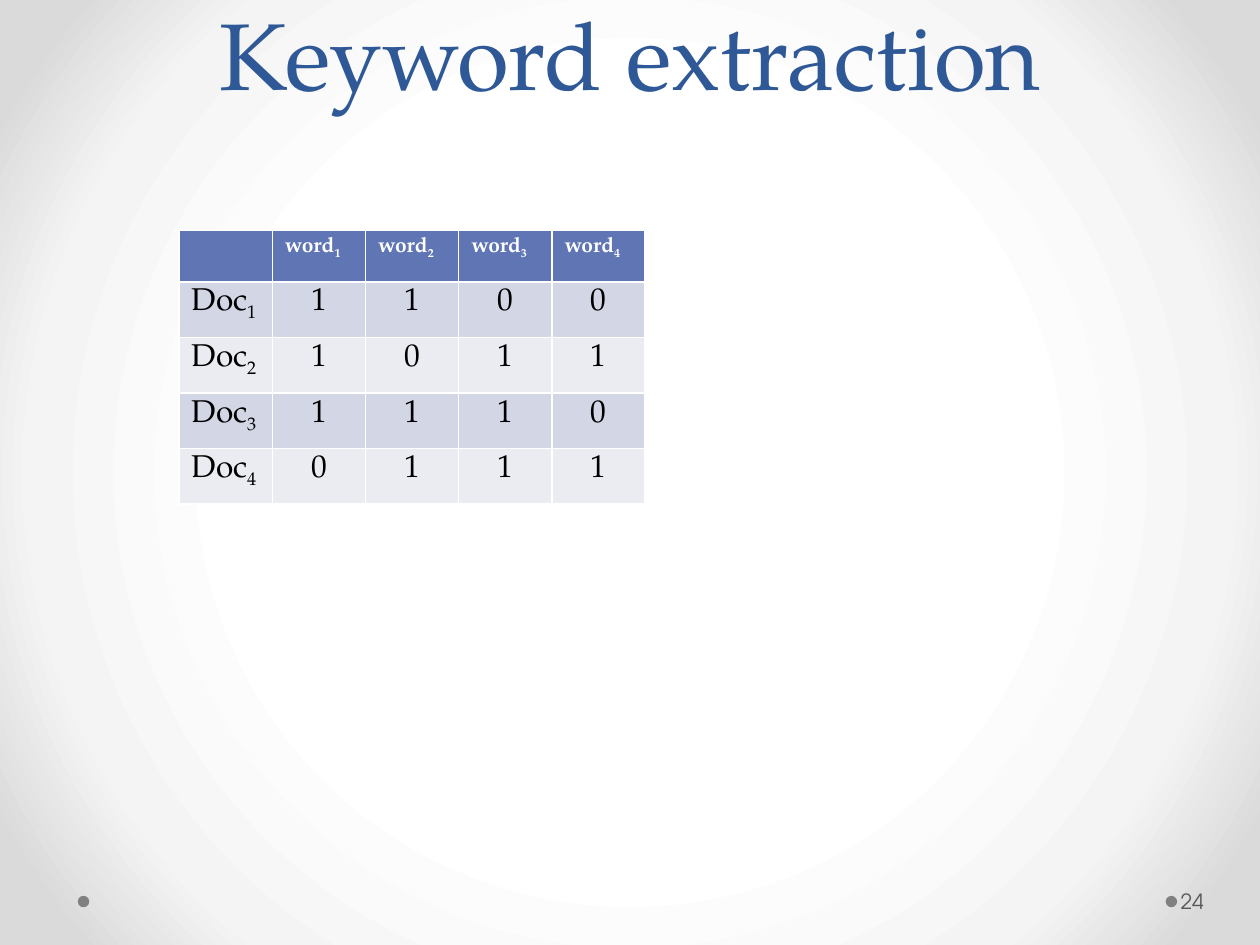
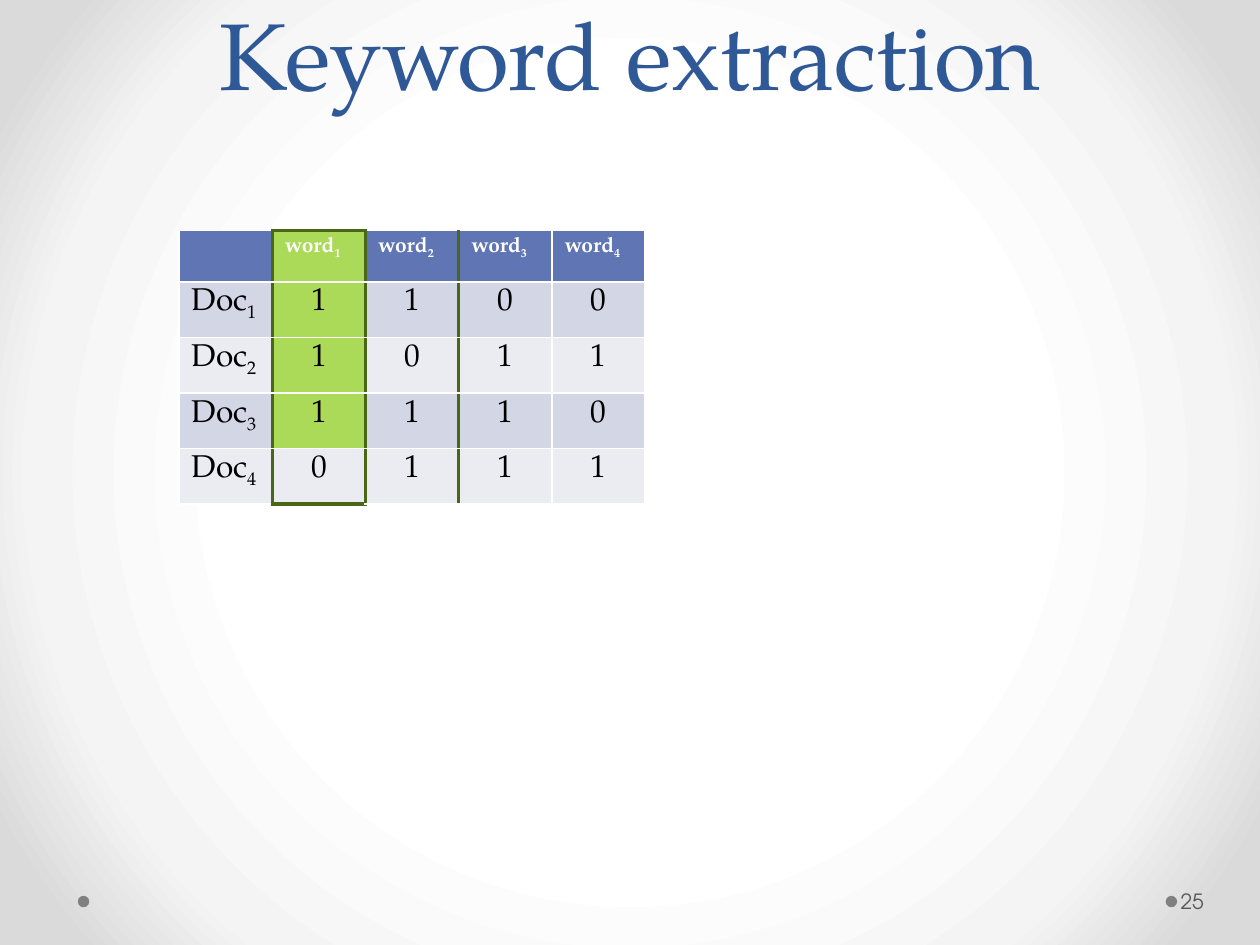
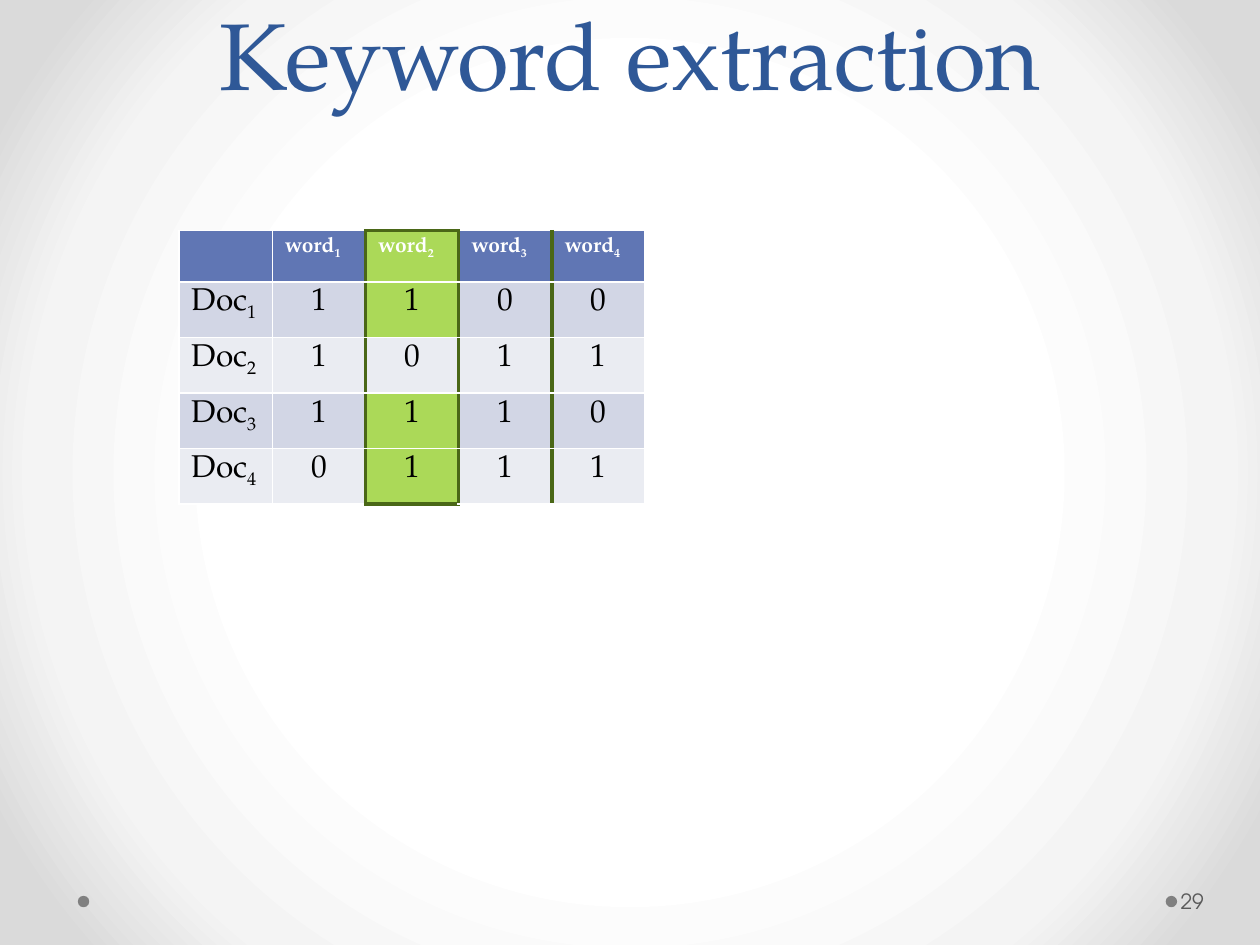
from typing import NamedTuple, Optional

from lxml import etree
from pptx import Presentation
from pptx.dml.color import RGBColor
from pptx.enum.shapes import MSO_SHAPE
from pptx.enum.text import MSO_ANCHOR, MSO_AUTO_SIZE, PP_ALIGN
from pptx.oxml import parse_xml
from pptx.oxml.ns import nsdecls, qn
from pptx.util import Cm, Pt

CENTER, LEFT = PP_ALIGN.CENTER, PP_ALIGN.LEFT
MIDDLE, BOTTOM = MSO_ANCHOR.MIDDLE, MSO_ANCHOR.BOTTOM
NO_AUTOFIT = MSO_AUTO_SIZE.NONE
ELLIPSE = MSO_SHAPE.OVAL
TITLE_ONLY = 5

SERIF, SANS = "TeX Gyre Pagella", "TeX Gyre Adventor"
TITLE_BLUE, NUMBER_GRAY, DOT_GRAY = "2F5897", "595959", "808080"
WHITE, BLACK = "FFFFFF", "000000"
HEADER_FILL, BANDS = "6076B4", ("D2D6E5", "EAECF2")
MARK_FILL, MARK_LINE = "ABD958", "4A6717"
BACKGROUND_STOPS = ((50, "FFFFFF"), (76, "F4F4F4"), (92, "DADADA"))

DOT_LEFTS, DOT_TOP, DOT_SIZE = (23.5, 1.57), 18.06, 0.23
COLUMN_WIDTH, ROW_HEIGHT = 1.88, 1.03
OCCURRENCES = ((1, 1, 0, 0), (1, 0, 1, 1), (1, 1, 1, 0), (0, 1, 1, 1))


class KeywordSlide(NamedTuple):
    number: int
    marked_word: Optional[int] = None


SLIDES = (KeywordSlide(24), KeywordSlide(25, 1), KeywordSlide(29, 2))


def rgb(color: str) -> RGBColor:
    return RGBColor.from_string(color)


def write(p, text: str, *, size: float, color: str, font: str = SERIF,
          bold: bool = False, align=LEFT, subscript: str = "") -> None:
    p.alignment = align
    for part in filter(None, (text, subscript)):
        r = p.add_run()
        r.text = part
        r.font.name, r.font.size, r.font.bold = font, Pt(size), bold
        r.font.color.rgb = rgb(color)
    if subscript:
        r.font._element.set("baseline", "-25000")


def set_background(master) -> None:
    """Give the master a white-to-gray circular gradient."""
    c_sld = master.element.find(qn("p:cSld"))
    old = c_sld.find(qn("p:bg"))
    if old is not None:
        c_sld.remove(old)
    stops = "".join(f'<a:gs pos="{pos * 1000}"><a:srgbClr val="{color}"/></a:gs>'
                    for pos, color in BACKGROUND_STOPS)
    c_sld.insert(0, parse_xml(
        f'<p:bg {nsdecls("p", "a")}><p:bgPr><a:gradFill rotWithShape="1">'
        f'<a:gsLst>{stops}</a:gsLst><a:path path="circle">'
        '<a:fillToRect l="50000" t="50000" r="50000" b="50000"/></a:path>'
        '</a:gradFill><a:effectLst/></p:bgPr></p:bg>'))


def add_master_dots(master, slide) -> None:
    """Draw the footer dots on a slide and move them to its master."""
    for i, left in enumerate(DOT_LEFTS):
        dot = slide.shapes.add_shape(ELLIPSE, Cm(left), Cm(DOT_TOP),
                                     Cm(DOT_SIZE), Cm(DOT_SIZE))
        dot.shadow.inherit = False
        dot.fill.solid()
        dot.fill.fore_color.rgb = rgb(DOT_GRAY)
        dot.line.fill.background()
        dot.element.nvSpPr.cNvPr.set("id", str(20 + i))
        master.shapes.element.append(dot.element)


def add_title(slide, text: str) -> None:
    title = slide.shapes.title
    title.left, title.top, title.width, title.height = Cm(1.27), Cm(0), Cm(22.86), Cm(2.34)
    tf = title.text_frame
    tf.auto_size, tf.vertical_anchor = NO_AUTOFIT, BOTTOM
    p = tf.paragraphs[0]
    p.line_spacing = Pt(58)
    write(p, text, size=54, color=TITLE_BLUE, align=CENTER)


def add_number(slide, number: int) -> None:
    tf = slide.shapes.add_textbox(Cm(23.72), Cm(17.65), Cm(1.55), Cm(1.02)).text_frame
    tf.word_wrap, tf.vertical_anchor = True, MIDDLE
    tf.margin_left = Cm(0.08)
    tf.margin_right = Cm(0.13)
    write(tf.paragraphs[0], str(number), size=12, color=NUMBER_GRAY, font=SANS)


def marked_sides(row: int, column: int, marked: Optional[int]) -> str:
    """Name the sides of a cell that lie on the frame of the marked column."""
    if marked is None:
        return ""
    if column == marked:
        return "LR" + "T" * (row == 0) + "B" * (row == len(OCCURRENCES))
    return {marked - 1: "R", marked + 1: "L"}.get(column, "")


def draw_borders(cell, sides: str) -> None:
    tc_pr = cell._tc.get_or_add_tcPr()
    for side in sides:
        ln = etree.SubElement(tc_pr, qn(f"a:ln{side}"), w=str(Pt(2.25)), cmpd="sng")
        fill = etree.SubElement(ln, qn("a:solidFill"))
        etree.SubElement(fill, qn("a:srgbClr"), val=MARK_LINE)
        etree.SubElement(ln, qn("a:prstDash"), val="solid")


def add_word_table(slide, marked: Optional[int]) -> None:
    """Add the table of words per document; the table style draws the white lines."""
    size = len(OCCURRENCES) + 1
    table = slide.shapes.add_table(size, size, Cm(3.61), Cm(4.65),
                                   Cm(size * COLUMN_WIDTH), Cm(size * ROW_HEIGHT)).table
    for row in range(size):
        for column in range(size):
            cell = table.cell(row, column)
            p = cell.text_frame.paragraphs[0]
            value = OCCURRENCES[row - 1][column - 1] if row and column else None
            if value is not None:
                write(p, str(value), size=18, color=BLACK, align=CENTER)
            elif row:
                write(p, "Doc", subscript=str(row), size=18, color=BLACK)
            elif column:
                write(p, "word", subscript=str(column), size=12, color=WHITE, bold=True)
            draw_borders(cell, marked_sides(row, column, marked))
            fill = BANDS[(row - 1) % 2] if row else HEADER_FILL
            if column == marked and value != 0:
                fill = MARK_FILL
            cell.fill.solid()
            cell.fill.fore_color.rgb = rgb(fill)


def main() -> None:
    prs = Presentation()
    prs.slide_width, prs.slide_height = Cm(25.4), Cm(19.05)
    master = prs.slide_master
    set_background(master)
    for i, content in enumerate(SLIDES):
        slide = prs.slides.add_slide(prs.slide_layouts[TITLE_ONLY])
        if i == 0:
            add_master_dots(master, slide)
        add_title(slide, "Keyword extraction")
        add_number(slide, content.number)
        add_word_table(slide, content.marked_word)
    prs.save("out.pptx")


if __name__ == "__main__":
    main()
